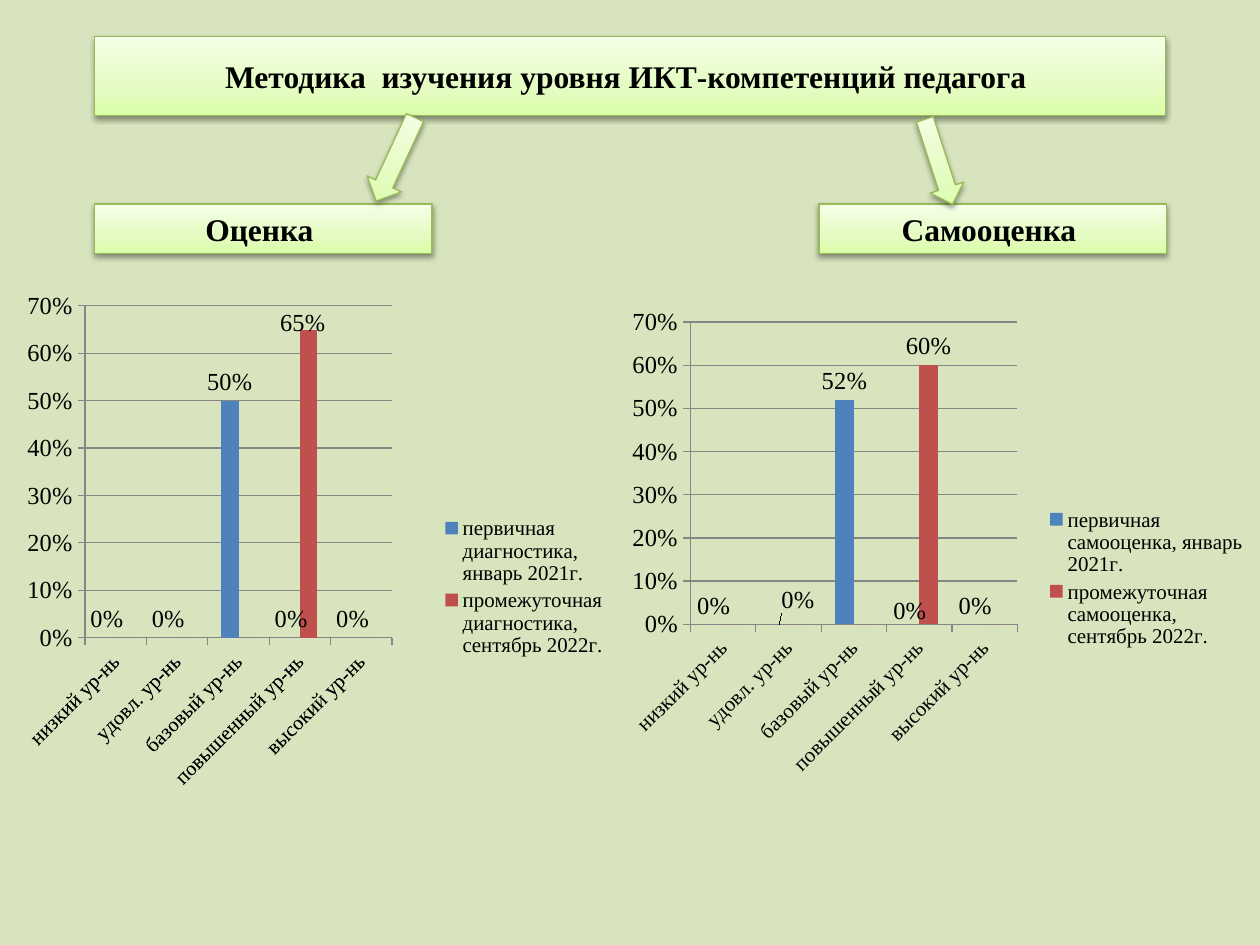
from lxml import etree
from pptx import Presentation
from pptx.chart.data import CategoryChartData
from pptx.dml.color import RGBColor
from pptx.enum.chart import XL_CHART_TYPE as ChartType
from pptx.enum.chart import XL_LABEL_POSITION as LabelPos
from pptx.enum.chart import XL_LEGEND_POSITION as LegendPos
from pptx.enum.chart import XL_TICK_MARK as TickMark
from pptx.enum.shapes import MSO_SHAPE as Shape
from pptx.enum.text import MSO_ANCHOR as Anchor
from pptx.enum.text import PP_ALIGN as Align
from pptx.oxml import parse_xml
from pptx.util import Inches, Pt

BACKGROUND = RGBColor(0xD7, 0xE4, 0xBD)
BORDER = RGBColor(0x98, 0xB9, 0x55)
BLACK = RGBColor(0, 0, 0)
GREY = RGBColor(0x86, 0x86, 0x86)
BLUE = RGBColor(0x4F, 0x81, 0xBD)
RED = RGBColor(0xC0, 0x50, 0x4D)
GRADIENT = [(0, "DAFDA7"), (35, "E4FCC2"), (100, "F5FFE7")]
SERIF = "Times New Roman"

HEADINGS = [
    ("Методика  изучения уровня ИКТ-компетенций педагога ", (0.75, 0.29, 8.5, 0.63)),
    ("Оценка ", (0.75, 1.62, 2.68, 0.39)),
    ("Самооценка ", (6.5, 1.62, 2.76, 0.39)),
]
ARROWS = [((2.99, 0.9, 0.3, 0.73), 24.9), ((7.31, 0.93, 0.28, 0.71), 342)]
LEVELS = ["низкий ур-нь", "удовл. ур-нь", "базовый ур-нь", "повышенный ур-нь", "высокий ур-нь"]
SURVEYS = [
    {
        "box": (0.2, 2.18, 4.72, 4.96),
        "series": [
            ("первичная диагностика, январь 2021г.", [0, 0, 0.5, 0, 0], BLUE, {}),
            ("промежуточная диагностика, сентябрь 2022г.", [0, 0, 0, 0.65, 0], RED,
             {0: None, 1: None, 2: None, 3: (-0.01, 0.02), 4: None}),
        ],
    },
    {
        "box": (5, 2.33, 5, 4.52),
        "series": [
            ("первичная самооценка, январь 2021г.", [0, 0, 0.52, 0, 0], BLUE,
             {1: (0.03, -0.01), 3: (0, 0.01)}),
            ("промежуточная самооценка, сентябрь 2022г.", [0, 0, 0, 0.6, 0], RED,
             {0: None, 1: None, 2: None, 4: None}),
        ],
    },
]
PLOT_AREA = {"x": 0.096, "y": 0.049, "w": 0.519, "h": 0.531}
PLOT_AREA = {side: round(share, 2) if side == "y" else share for side, share in PLOT_AREA.items()}
HEADING_FONT = {"name": SERIF, "size": Pt(18), "bold": True}
LARGE_FONT = {"name": SERIF, "size": Pt(14)}
SMALL_FONT = {"name": SERIF, "size": Pt(12)}
VALUE_SCALE = {"minimum_scale": 0, "maximum_scale": 0.7, "major_unit": 0.1,
               "has_major_gridlines": True, "major_tick_mark": TickMark.OUTSIDE}
LABEL_FORMAT = {"show_value": True, "number_format": "0%",
                "number_format_is_linked": False, "position": LabelPos.OUTSIDE_END}
DRAWING_NS = 'xmlns:a="http://schemas.openxmlformats.org/drawingml/2006/main"'
CHART_NS = 'xmlns:c="http://schemas.openxmlformats.org/drawingml/2006/chart"'


def apply(target, values):
    for key, value in values.items():
        setattr(target, key, value)


def style_font(font, values):
    apply(font, values)
    font.color.rgb = BLACK


def inches(box):
    return [Inches(length) for length in box]


def add_green_shape(slide, kind, box):
    shape = slide.shapes.add_shape(kind, *inches(box))
    shape.shadow.inherit = False
    apply(shape.line, {"width": Pt(0.75)})
    shape.line.color.rgb = BORDER
    stops = "".join(f'<a:gs pos="{at * 1000}"><a:srgbClr val="{tone}"/></a:gs>' for at, tone in GRADIENT)
    properties = shape.line._get_or_add_ln().getparent()
    properties.find("{*}ln").addprevious(parse_xml(
        f'<a:gradFill {DRAWING_NS} rotWithShape="1"><a:gsLst>{stops}</a:gsLst>'
        '<a:lin ang="16200000" scaled="0"/></a:gradFill>'))
    properties.find("{*}effectLst").append(parse_xml(
        f'<a:outerShdw {DRAWING_NS} blurRad="{Pt(3.1)}" dist="{Pt(1.6)}" dir="5400000" '
        'rotWithShape="0"><a:srgbClr val="000000"><a:alpha val="38000"/></a:srgbClr></a:outerShdw>'))
    return shape


def manual_layout(values, inner=False):
    target = '<c:layoutTarget val="inner"/><c:xMode val="edge"/><c:yMode val="edge"/>' if inner else ""
    sides = "".join(f'<c:{side} val="{share}"/>' for side, share in values.items())
    return f"<c:layout {CHART_NS}><c:manualLayout>{target}{sides}</c:manualLayout></c:layout>"


def adjust_label(index, offset):
    if offset is None:
        body = '<c:delete val="1"/>'
    else:
        shown = {"LegendKey": 0, "Val": 1, "CatName": 0, "SerName": 0, "Percent": 0, "BubbleSize": 0}
        body = manual_layout(dict(zip("xy", offset))) + '<c:dLblPos val="outEnd"/>'
        body += "".join(f'<c:show{part} val="{flag}"/>' for part, flag in shown.items())
    return parse_xml(f'<c:dLbl {CHART_NS}><c:idx val="{index}"/>{body}</c:dLbl>')


def add_survey(slide, survey):
    data = CategoryChartData(number_format="0%")
    data.categories = LEVELS
    for name, values, _, _ in survey["series"]:
        data.add_series(name, values)
    chart = slide.shapes.add_chart(ChartType.COLUMN_CLUSTERED, *inches(survey["box"]), data).chart
    apply(chart, {"has_title": False, "has_legend": True})
    style_font(chart.font, {"name": "Calibri", "size": Pt(18)})
    apply(chart.legend, {"position": LegendPos.RIGHT, "include_in_layout": False})
    style_font(chart.legend.font, SMALL_FONT)

    levels, shares = chart.category_axis, chart.value_axis
    apply(levels, {"major_tick_mark": TickMark.OUTSIDE})
    apply(shares, VALUE_SCALE)
    apply(shares.tick_labels, {"number_format": "0%", "number_format_is_linked": False})
    style_font(levels.tick_labels.font, SMALL_FONT)
    style_font(shares.tick_labels.font, LARGE_FONT)
    for part in (levels, shares, shares.major_gridlines):
        part.format.line.color.rgb = GREY
        part.format.line.width = Pt(0.75)

    plot = chart.plots[0]
    apply(plot, {"gap_width": 150, "vary_by_categories": False})
    plot_area = chart.element.find(".//{*}plotArea")
    for layout in plot_area.findall("{*}layout"):
        plot_area.remove(layout)
    plot_area.insert(0, parse_xml(manual_layout(PLOT_AREA, inner=True)))
    for series, (_, _, color, adjustments) in zip(plot.series, survey["series"]):
        series.format.fill.solid()
        series.format.fill.fore_color.rgb = color
        labels = series.data_labels
        apply(labels, LABEL_FORMAT)
        style_font(labels.font, LARGE_FONT)
        label_list = series._element.find("{*}dLbls")
        for place, (index, offset) in enumerate(adjustments.items()):
            label = adjust_label(index, offset)
            if offset is not None:
                position = label.find("{*}dLblPos")
                for shared in ("numFmt", "txPr"):
                    source = label_list.find("{*}" + shared)
                    position.addprevious(parse_xml(etree.tostring(source)))
            label_list.insert(place, label)


def main():
    deck = Presentation()
    apply(deck, {"slide_width": Inches(10), "slide_height": Inches(7.5)})
    slide = deck.slides.add_slide(deck.slide_layouts[6])
    slide.background.fill.solid()
    slide.background.fill.fore_color.rgb = BACKGROUND
    add_survey(slide, SURVEYS[0])
    for text, box in HEADINGS:
        frame = add_green_shape(slide, Shape.RECTANGLE, box).text_frame
        apply(frame, {"text": text, "word_wrap": True, "vertical_anchor": Anchor.MIDDLE})
        frame.paragraphs[0].alignment = Align.CENTER
        style_font(frame.paragraphs[0].runs[0].font, HEADING_FONT)
    for box, turn in ARROWS:
        add_green_shape(slide, Shape.DOWN_ARROW, box).rotation = turn
    add_survey(slide, SURVEYS[1])
    deck.save("out.pptx")


if __name__ == "__main__":
    main()
